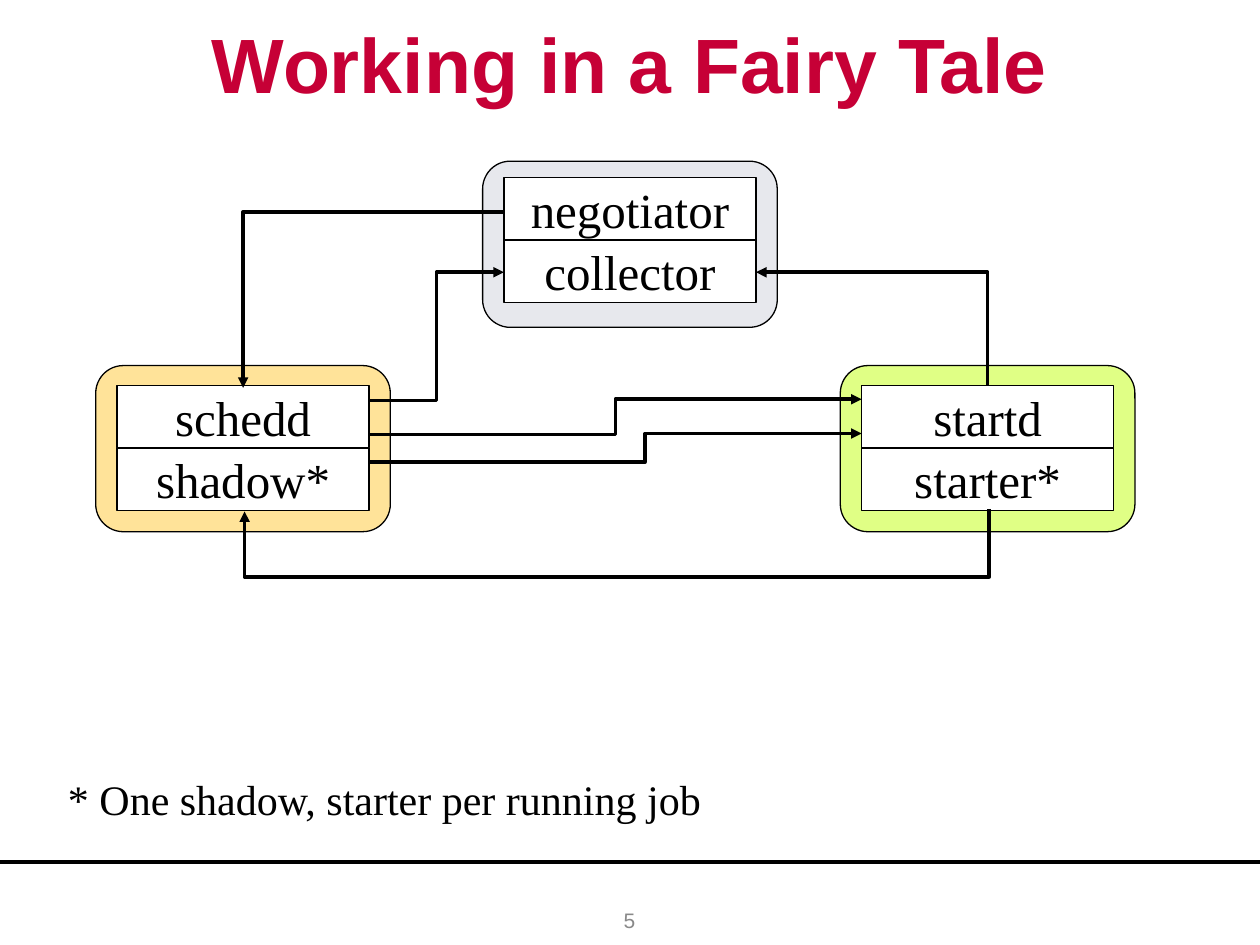
from lxml.etree import SubElement
from pptx import Presentation
from pptx.dml.color import RGBColor
from pptx.enum.shapes import MSO_CONNECTOR, MSO_SHAPE
from pptx.enum.text import MSO_ANCHOR, PP_ALIGN
from pptx.oxml.ns import qn
from pptx.util import Cm, Pt

# Content: lengths in centimetres
TITLE = "Working in a Fairy Tale"
FOOTNOTE = "* One shadow, starter per running job"
PAGE_NUMBER = "5"

# Machines: daemons, left and top of the first daemon, top of the panel, panel colour
MACHINES = [
    (("startd", "starter*"), 17.37, 7.77, 7.37, "E0FF85"),
    (("negotiator", "collector"), 10.16, 3.58, 3.25, "E7E8ED"),
    (("schedd", "shadow*"), 2.36, 7.77, 7.37, "FFE399"),
]
DAEMON_WIDTH, DAEMON_HEIGHT = 5.08, 1.26
PANEL_WIDTH, PANEL_HEIGHT = 5.94, 3.35

# Messages: start, end, heading at the start, bend as a share of the way (None: one corner)
RIGHT, LEFT, DOWN, UP = (1, 0), (-1, 0), (0, 1), (0, -1)
MESSAGES = [
    ((7.44, 8.08), (10.16, 5.49), RIGHT, 0.5),
    ((19.91, 7.77), (15.24, 5.49), UP, None),
    ((10.16, 4.27), (4.90, 7.82), LEFT, None),
    ((19.94, 10.26), (4.93, 10.31), DOWN, 27.4),
    ((7.44, 9.32), (17.37, 8.74), RIGHT, 0.56),
    ((7.44, 8.76), (17.37, 8.05), RIGHT, 0.5),
]
TURNS = {RIGHT: 0, DOWN: 90, LEFT: 180, UP: 270}

# Formats
TITLE_FONT = {"name": "Arial", "size": Pt(44), "bold": True, "color": "C60036"}
DAEMON_FONT = {"name": "Times New Roman", "size": Pt(28), "color": "000000"}
NOTE_FONT = {"name": "Times New Roman", "size": Pt(24), "color": "000000"}
NUMBER_FONT = {"name": "Arial", "size": Pt(12), "color": "898989"}


def color(hex_value):
    return RGBColor.from_string(hex_value)


def place(shape, left, top, width, height):
    edges = {"left": left, "top": top, "width": width, "height": height}
    for name, value in edges.items():
        setattr(shape, name, Cm(value))


def write(shape, text, font_format, align=PP_ALIGN.CENTER, anchor=MSO_ANCHOR.MIDDLE):
    frame = shape.text_frame
    frame.word_wrap = True
    frame.vertical_anchor = anchor
    para = frame.paragraphs[0]
    para.alignment = align
    span = para.add_run()
    span.text = text
    for name, value in font_format.items():
        if name == "color":
            span.font.color.rgb = color(value)
        else:
            setattr(span.font, name, value)


def add_box(page, kind, left, top, width, height, fill):
    box = page.shapes.add_shape(kind, Cm(left), Cm(top), Cm(width), Cm(height))
    box.shadow.inherit = False
    box.fill.solid()
    box.fill.fore_color.rgb = color(fill)
    box.line.color.rgb = color("000000")
    box.line.width = Pt(0.75)
    return box


def add_note(page, left, top, width, height, *text_format):
    note = page.shapes.add_textbox(Cm(left), Cm(top), Cm(width), Cm(height))
    write(note, *text_format)


def add_line(page, kind, start, end, weight):
    line = page.shapes.add_connector(kind, *(Cm(value) for value in (*start, *end)))
    line.line.color.rgb = color("000000")
    line.line.width = Pt(weight)
    SubElement(line._element.spPr, qn("a:effectLst"))
    return line


def add_message(page, start, end, heading, bend):
    # Lay the elbow out along its heading, then turn it about its centre
    across, down = end[0] - start[0], end[1] - start[1]
    forward = heading[0] * across + heading[1] * down
    sideways = heading[0] * down - heading[1] * across
    left = (start[0] + end[0] - forward) / 2
    top = (start[1] + end[1] - abs(sideways)) / 2
    corner = (left + forward, top + abs(sideways))
    arrow = add_line(page, MSO_CONNECTOR.ELBOW, (left, top), corner, 2)

    properties = arrow._element.spPr
    frame = properties.find(qn("a:xfrm"))
    frame.set("rot", str(TURNS[heading] * 60000))
    if sideways < 0:
        frame.set("flipV", "1")
    geometry = properties.find(qn("a:prstGeom"))
    if bend is None:
        geometry.set("prst", "bentConnector2")
    else:
        guide = SubElement(geometry.find(qn("a:avLst")), qn("a:gd"))
        guide.set("name", "adj1")
        guide.set("fmla", f"val {round(bend * 100000)}")
    SubElement(properties.find(qn("a:ln")), qn("a:tailEnd")).set("type", "triangle")


def main():
    deck = Presentation()
    deck.slide_width, deck.slide_height = Cm(25.4), Cm(19.05)
    page = deck.slides.add_slide(deck.slide_layouts[5])

    # Title
    place(page.shapes.title, 0, 0, 25.4, 2.54)
    write(page.shapes.title, TITLE, TITLE_FONT)

    # Footer
    add_line(page, MSO_CONNECTOR.STRAIGHT, (0, 17.37), (25.4, 17.37), 2.25)
    add_note(page, 9.73, 18.03, 5.92, 1.02, PAGE_NUMBER, NUMBER_FONT)

    # Machines with their daemons stacked inside
    for daemons, left, top, panel_top, fill in MACHINES:
        panel_left = left - (PANEL_WIDTH - DAEMON_WIDTH) / 2
        add_box(page, MSO_SHAPE.ROUNDED_RECTANGLE, panel_left, panel_top,
                PANEL_WIDTH, PANEL_HEIGHT, fill)
        for row, daemon in enumerate(daemons):
            box = add_box(page, MSO_SHAPE.RECTANGLE, left, top + row * DAEMON_HEIGHT,
                          DAEMON_WIDTH, DAEMON_HEIGHT, "FFFFFF")
            write(box, daemon, DAEMON_FONT)

    # Messages between daemons
    for message in MESSAGES:
        add_message(page, *message)

    # Footnote
    add_note(page, 1.12, 15.47, 15.93, 1.27, FOOTNOTE, NOTE_FONT,
             PP_ALIGN.LEFT, MSO_ANCHOR.TOP)
    deck.save("out.pptx")


if __name__ == "__main__":
    main()
